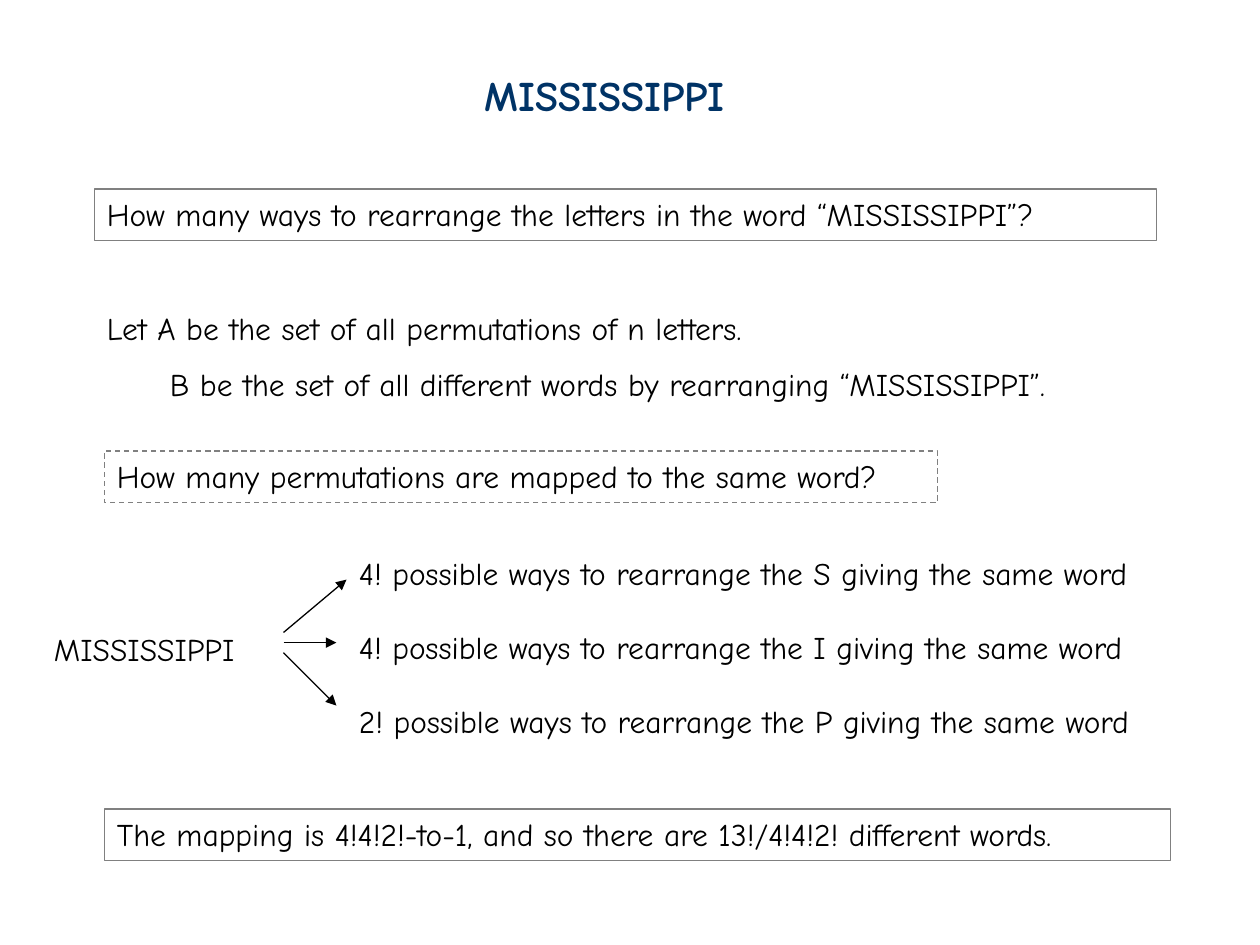
from lxml import etree
from pptx import Presentation
from pptx.dml.color import RGBColor
from pptx.enum import dml, shapes, text
from pptx.oxml import ns
from pptx.util import Inches, Pt

NAVY = RGBColor(0x00, 0x33, 0x66)
BLACK = RGBColor(0x00, 0x00, 0x00)
GRAY = RGBColor(0x80, 0x80, 0x80)

BODY = {"name": "Comic Neue", "size": Pt(18), "bold": False}
HEADING = {"name": "Comic Neue", "size": Pt(24), "bold": True}
FRAME = {
    "word_wrap": True,
    "auto_size": text.MSO_AUTO_SIZE.SHAPE_TO_FIT_TEXT,
    "vertical_anchor": text.MSO_ANCHOR.TOP,
}


def apply(target, values):
    for name, value in values.items():
        setattr(target, name, value)


def write(holder, lines, style=BODY, color=BLACK):
    """Fill a shape or text box with one paragraph per line."""
    frame = holder.text_frame
    apply(frame, FRAME)
    for number, line in enumerate(lines):
        paragraph = frame.add_paragraph() if number else frame.paragraphs[0]
        paragraph.text = line
        paragraph.alignment = text.PP_ALIGN.LEFT
        apply(paragraph.font, style)
        paragraph.font.color.rgb = color
    return frame


def add_text(slide, box, lines, style=BODY, color=BLACK):
    holder = slide.shapes.add_textbox(*map(Inches, box))
    return write(holder, lines, style, color)


def add_framed_text(slide, box, line, dash=None):
    """A statement inside a thin gray outline."""
    statement = slide.shapes.add_shape(
        shapes.MSO_SHAPE.RECTANGLE, *map(Inches, box))
    statement.shadow.inherit = False
    statement.fill.background()
    statement.line.color.rgb = GRAY
    apply(statement.line, {"width": Pt(0.75), "dash_style": dash})
    write(statement, [line])


def add_definitions(slide, box):
    """Sets A and B, with B indented under A."""
    frame = add_text(slide, box, [
        "Let A be the set of all permutations of n letters.",
        "B be the set of all different words by rearranging “MISSISSIPPI”.",
    ])
    set_b = frame.paragraphs[1]
    set_b.line_spacing = 1.5
    set_b._p.get_or_add_pPr().set("marL", str(Inches(0.5)))


def add_arrow(slide, start, end):
    arrow = slide.shapes.add_connector(
        shapes.MSO_CONNECTOR.STRAIGHT, *map(Inches, start + end))
    arrow.line.color.rgb = BLACK
    arrow.line.width = Pt(0.75)
    etree.SubElement(arrow.line._get_or_add_ln(), ns.qn("a:tailEnd"),
                     type="triangle")
    etree.SubElement(arrow._element.spPr, ns.qn("a:effectLst"))


def add_repeats(slide, box):
    """The word on the left, fanning out to one count per repeated letter."""
    left, top, width, height = box
    row_height = 0.4
    pitch = (height - row_height) / 2
    add_text(slide, (left, top + 0.6, 1.93, row_height), ["MISSISSIPPI"])

    counts_left = left + 2.42
    for row, (count, letter) in enumerate([("4!", "S"), ("4!", "I"), ("2!", "P")]):
        add_text(
            slide,
            (counts_left, top + row * pitch, width - 2.42, row_height),
            [f"{count} possible ways to rearrange the {letter} giving the same word"])

    tail_x, middle_y = left + 1.92, top + 0.75
    for start_dy, tip_dx, tip_dy in [(-0.08, 0.5, -0.5), (0, 0.42, 0), (0.08, 0.42, 0.5)]:
        add_arrow(slide, (tail_x, middle_y + start_dy),
                  (tail_x + tip_dx, middle_y + tip_dy))


def main():
    deck = Presentation()
    deck.slide_width, deck.slide_height = Inches(10), Inches(7.5)
    slide = deck.slides.add_slide(deck.slide_layouts[6])

    # Title and question
    add_text(slide, (3.75, 0.5, 2.5, 0.5), ["MISSISSIPPI"], HEADING, NAVY)
    add_framed_text(
        slide, (0.75, 1.5, 8.43, 0.41),
        "How many ways to rearrange the letters in the word “MISSISSIPPI”?")

    # Mapping from permutations to words
    add_definitions(slide, (0.75, 2.4, 8.55, 0.85))
    add_framed_text(
        slide, (0.83, 3.58, 6.61, 0.41),
        "How many permutations are mapped to the same word?",
        dml.MSO_LINE.DASH)
    add_repeats(slide, (0.33, 4.35, 9.24, 1.57))

    # Conclusion
    add_framed_text(
        slide, (0.83, 6.42, 8.46, 0.41),
        "The mapping is 4!4!2!-to-1, and so there are 13!/4!4!2! different words.")

    deck.save("out.pptx")


if __name__ == "__main__":
    main()
